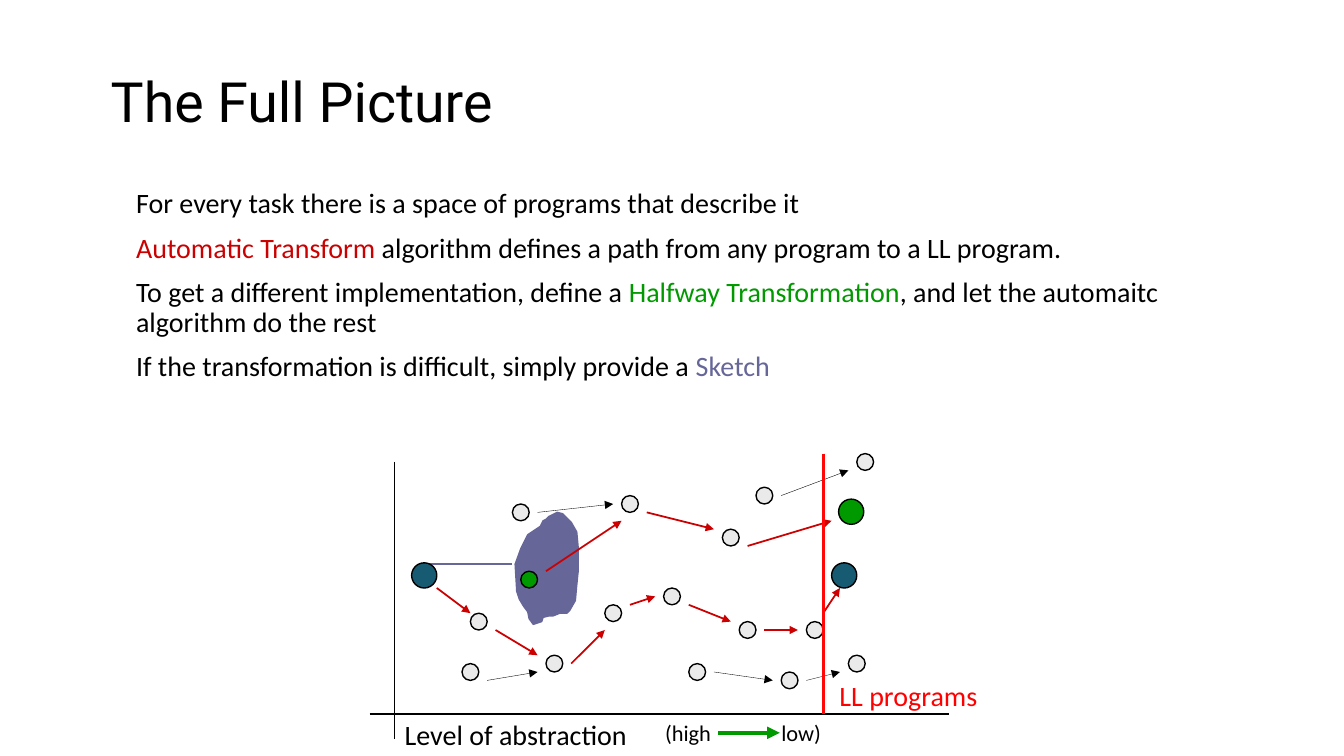
from lxml import etree
from pptx import Presentation
from pptx.dml.color import RGBColor
from pptx.enum.shapes import MSO_CONNECTOR, MSO_SHAPE
from pptx.enum.text import MSO_ANCHOR
from pptx.oxml.ns import qn
from pptx.util import Pt

LINE = MSO_CONNECTOR.STRAIGHT
OVAL = MSO_SHAPE.OVAL
TOP, MIDDLE = MSO_ANCHOR.TOP, MSO_ANCHOR.MIDDLE

BLACK, GRAY, TEAL = "000000", "EAEAEA", "175B73"
RED, GREEN, PURPLE = "CC0000", "009900", "666699"


def color(code):
    return RGBColor.from_string(code)


class Board:
    font = "Calibri"
    small, large = 12, 18

    def __init__(self, slide):
        self.shapes = slide.shapes

    def paint(self, shape, fill, edge):
        shape.shadow.inherit = False
        shape.fill.solid()
        shape.fill.fore_color.rgb = color(fill)
        shape.line.color.rgb = color(edge)
        shape.line.width = Pt(1)

    def dot(self, x, y, size, fill):
        shape = self.shapes.add_shape(OVAL, Pt(x), Pt(y), Pt(size), Pt(size))
        self.paint(shape, fill, BLACK)

    def patch(self, points, fill):
        pen = self.shapes.build_freeform(*points[0], scale=Pt(1))
        pen.add_line_segments(points[1:], close=True)
        self.paint(pen.convert_to_shape(), fill, fill)

    def line(self, ends, tint, width, arrow=False):
        link = self.shapes.add_connector(LINE, *map(Pt, ends))
        link.line.color.rgb = color(tint)
        link.line.width = Pt(width)
        props = link._element.spPr
        if arrow:
            etree.SubElement(props.find(qn("a:ln")), qn("a:tailEnd"),
                             type="triangle")
        etree.SubElement(props, qn("a:effectLst"))

    def text(self, box, rows, size, font=None, anchor=TOP, inset=7.2,
             space=1.0, before=0, tab=None):
        """Each row is a list of (words, colour) runs."""
        frame = self.shapes.add_textbox(*map(Pt, box)).text_frame
        frame.word_wrap = True
        frame.vertical_anchor = anchor
        frame.margin_left = Pt(inset)
        for i, row in enumerate(rows):
            para = frame.add_paragraph() if i else frame.paragraphs[0]
            para.line_spacing = space
            para.space_before = Pt(before)
            if tab:
                stops = etree.SubElement(para._p.get_or_add_pPr(), qn("a:tabLst"))
                etree.SubElement(stops, qn("a:tab"), pos=str(Pt(tab)), algn="l")
            para.font.size = Pt(size)
            para.font.name = font or self.font
            for words, tint in row:
                run = para.add_run()
                run.text = words
                run.font.color.rgb = color(tint)


# Sketch outline
SKETCH = [
    (413.3, 401.8), (413.2, 407.5), (412.5, 418.4), (410.6, 429.4),
    (406.8, 435.6), (404.8, 437.6), (399.6, 438.5), (395.3, 439.9),
    (391.7, 440.4), (388.1, 441.4), (386.6, 443.5), (380.9, 445.7),
    (378.5, 441.8), (377.3, 437), (373.7, 432.7), (370.8, 427.7),
    (369.4, 421.9), (368.6, 419.8), (368.3, 403.1), (372.2, 392.4),
    (377.2, 382), (385.9, 375.8), (388.1, 371.5), (390.2, 370.8),
    (392.4, 368.6), (398.2, 365.8), (402.2, 367.3), (406.1, 370.8),
    (408.2, 373.2), (411.8, 380.2), (413, 391),
]

# Programs, as top left corners
PROGRAMS = [
    (336, 438), (390, 468), (432, 432), (474, 420), (528, 444),
    (576, 444), (366, 360), (492, 474), (516, 378), (330, 474),
    (444, 354), (540, 348), (558, 480), (606, 468), (612, 324),
]

# Steps between programs, as start and end points
OTHER = [
    (348, 486, 384, 480), (384, 366, 438, 360), (558, 354, 606, 336),
    (510, 480, 552, 486), (576, 486, 600, 480),
]
AUTO = [
    (312, 420, 336, 438), (354, 450, 384, 468), (408, 474, 432, 450),
    (450, 432, 468, 426), (492, 432, 522, 444), (546, 450, 570, 450),
    (588, 438, 600, 420),
]
HALFWAY = [
    (462, 366, 510, 378), (534, 390, 594, 372), (390, 408, 444, 372),
]

BODY = [
    [("For every task there is a space of programs that describe it", BLACK)],
    [("Automatic Transform", RED),
     (" algorithm defines a path from any program to a LL program.", BLACK)],
    [("To get a different implementation, define a ", BLACK),
     ("Halfway Transformation", GREEN),
     (", and let the automaitc algorithm do the rest", BLACK)],
    [("If the transformation is difficult, simply provide a ", BLACK),
     ("Sketch", PURPLE)],
]


def main():
    deck = Presentation()
    deck.slide_width, deck.slide_height = Pt(960), Pt(540)
    board = Board(deck.slides.add_slide(deck.slide_layouts[6]))

    # Sketch
    board.patch(SKETCH, PURPLE)
    board.line((306, 403, 366, 403), PURPLE, 1.25)

    # Title and body
    board.text((72, 48, 816, 54), [[("The Full Picture", BLACK)]], 39.6,
               font="Roboto", anchor=MIDDLE, space=0.9)
    board.text((72, 132, 816, 168), BODY, 20, inset=25.2, space=0.9, before=10)

    # Programs
    for x, y in PROGRAMS:
        board.dot(x, y, board.small, GRAY)

    # Axes and their labels
    board.line((282, 330, 282, 528), BLACK, 1)
    board.line((264, 510, 678, 510), BLACK, 1)
    board.text((282, 509, 175, 32), [[("Level of abstraction", BLACK)]], 20)
    board.text((468, 510, 138, 27), [[("(high\tlow)", BLACK)]], 16, tab=83)
    board.line((513, 523.5, 557, 523.5), GREEN, 3, arrow=True)

    # Paths
    for step in OTHER:
        board.line(step, BLACK, 0.25, arrow=True)
    for step in AUTO + HALFWAY:
        board.line(step, RED, 1.25, arrow=True)

    # Start, ends and halfway point
    board.dot(294, 402, board.large, TEAL)
    board.dot(594, 402, board.large, TEAL)
    board.dot(599, 356.5, board.large, GREEN)
    board.dot(372, 408, board.small, GREEN)

    # Border of the LL programs
    board.line((588, 324, 588, 510), "FF0707", 2.25)
    board.text((592.5, 481, 120, 32), [[("LL programs", "FF0000")]], 20)

    deck.save("out.pptx")


if __name__ == "__main__":
    main()
